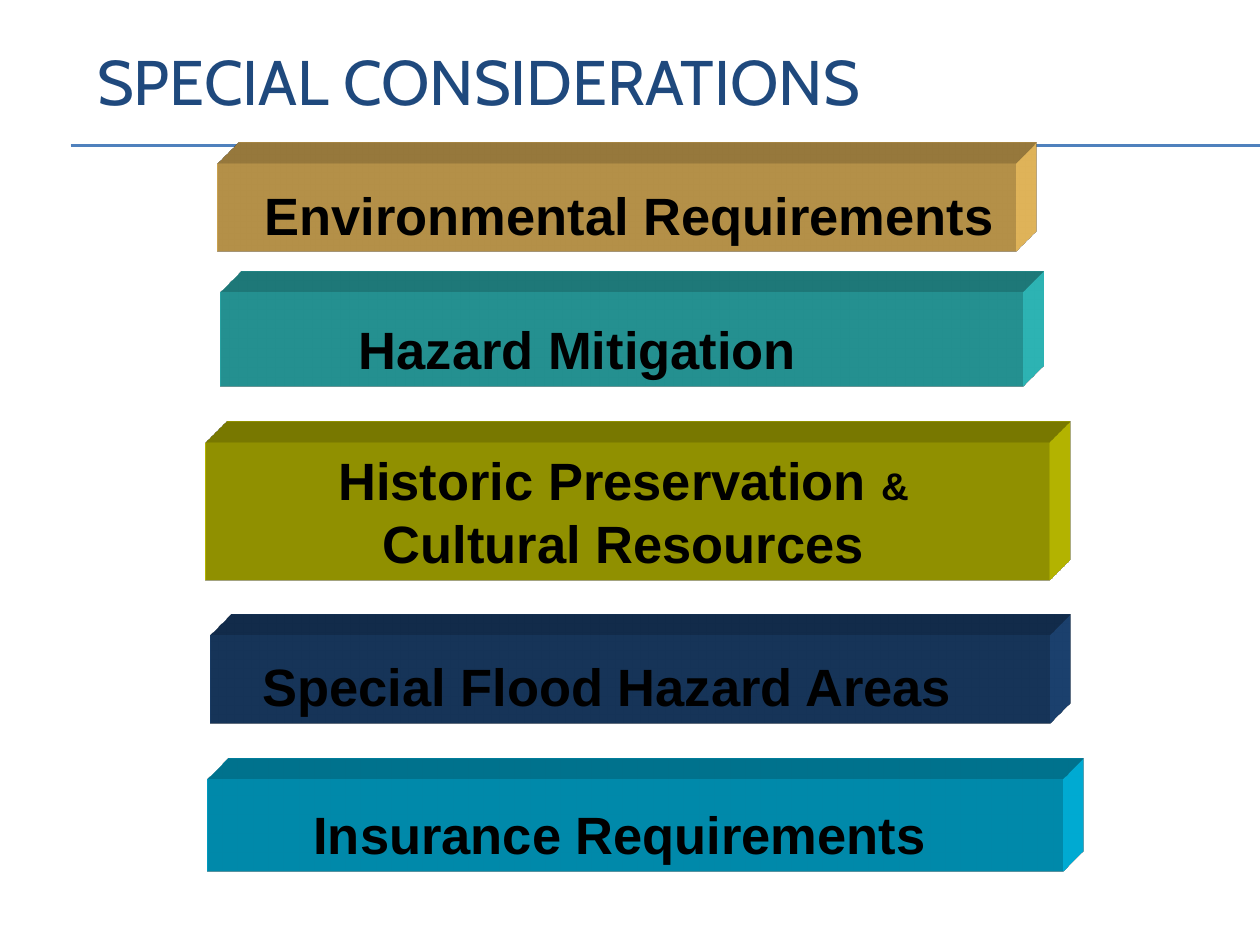
from lxml import etree
from pptx import Presentation
from pptx import util as u
from pptx.dml.color import RGBColor
from pptx.enum import shapes, text
from pptx.oxml import parse_xml
from pptx.oxml.ns import nsdecls, qn

INSET = 0.1
EXTRUSION_DEPTH = u.Inches(0.47)

# Each bar: box, fill, line spacing, shift of the text from the centre, lines of (words, size) runs
BARS = [
    ((1.73, 1.3, 6.33, 0.7), "FFCC66", 1.2, 0.1, [[("Environmental Requirements", 30)]]),
    ((1.75, 2.32, 6.37, 0.75), "33CCCC", 1.3, -0.35, [[("Hazard Mitigation", 30)]]),
    ((1.63, 3.51, 6.7, 1.1), "CCCC00", 1.0, -0.03,
     [[("Historic Preservation ", 30), ("&", 22)], [("Cultural Resources", 30)]]),
    ((1.67, 5.04, 6.66, 0.7), "1F497D", 1.2, -0.18, [[("Special Flood Hazard Areas", 30)]]),
    ((1.65, 6.19, 6.78, 0.73), "00C2F0", 1.25, -0.12, [[("Insurance Requirements", 30)]]),
]


def rgb(value):
    return RGBColor.from_string(value)


def inches(box):
    return [u.Inches(length) for length in box]


def place_title(slide, box, words):
    title = slide.shapes.title
    title.left, title.top, title.width, title.height = inches(box)
    title.text_frame.text = words
    title.text_frame.vertical_anchor = text.MSO_ANCHOR.MIDDLE
    heading = title.text_frame.paragraphs[0]
    heading.alignment = text.PP_ALIGN.LEFT
    heading.font.name, heading.font.size = "Cabin", u.Pt(36)
    heading.font.color.rgb = rgb("1F497D")


def add_rule(slide, left, right, y):
    rule = slide.shapes.add_connector(
        shapes.MSO_CONNECTOR.STRAIGHT, *inches((left, y, right, y)))
    rule.line.color.rgb = rgb("4F81BD")
    rule.line.width = u.Pt(0.75)
    etree.SubElement(rule._element.spPr, qn("a:effectLst"))


def extrude(shape, color):
    """Give the shape depth towards the upper right."""
    properties = shape._element.spPr
    properties.append(parse_xml(
        f'<a:scene3d {nsdecls("a")}><a:camera prst="legacyObliqueTopRight"/>'
        '<a:lightRig rig="legacyFlat3" dir="b"/></a:scene3d>'))
    properties.append(parse_xml(
        f'<a:sp3d {nsdecls("a")} extrusionH="{EXTRUSION_DEPTH}" prstMaterial="legacyMatte">'
        f'<a:extrusionClr><a:srgbClr val="{color}"/></a:extrusionClr></a:sp3d>'))


def add_bar(slide, box, color, spacing, shift, lines):
    bar = slide.shapes.add_shape(shapes.MSO_SHAPE.RECTANGLE, *inches(box))
    bar.shadow.inherit = False
    bar.fill.solid()
    bar.fill.fore_color.rgb = rgb(color)
    bar.line.fill.background()
    extrude(bar, color)

    # Uneven insets move the centred text sideways
    frame = bar.text_frame
    frame.word_wrap = True
    frame.auto_size = text.MSO_AUTO_SIZE.SHAPE_TO_FIT_TEXT
    frame.vertical_anchor = text.MSO_ANCHOR.TOP
    frame.margin_left = u.Inches(INSET + 2 * max(shift, 0))
    frame.margin_right = u.Inches(INSET + 2 * max(-shift, 0))

    for index, runs in enumerate(lines):
        line = frame.add_paragraph() if index else frame.paragraphs[0]
        line.alignment = text.PP_ALIGN.CENTER
        line.line_spacing = spacing
        line.font.name, line.font.bold = "Arial", True
        line.font.color.rgb = rgb("000000")
        for words, size in runs:
            run = line.add_run()
            run.text = words
            run.font.size = u.Pt(size)


def main():
    deck = Presentation()
    deck.slide_width, deck.slide_height = u.Inches(10), u.Inches(7.5)
    slide = deck.slides.add_slide(deck.slide_layouts[5])

    # Title and the double rule below it
    place_title(slide, (0.67, 0.25, 7.47, 0.78), "SPECIAL CONSIDERATIONS")
    for y in (1.15, 1.16):
        add_rule(slide, 0.56, 10, y)

    # Stack of considerations
    for bar in BARS:
        add_bar(slide, *bar)

    deck.save("out.pptx")


if __name__ == "__main__":
    main()
